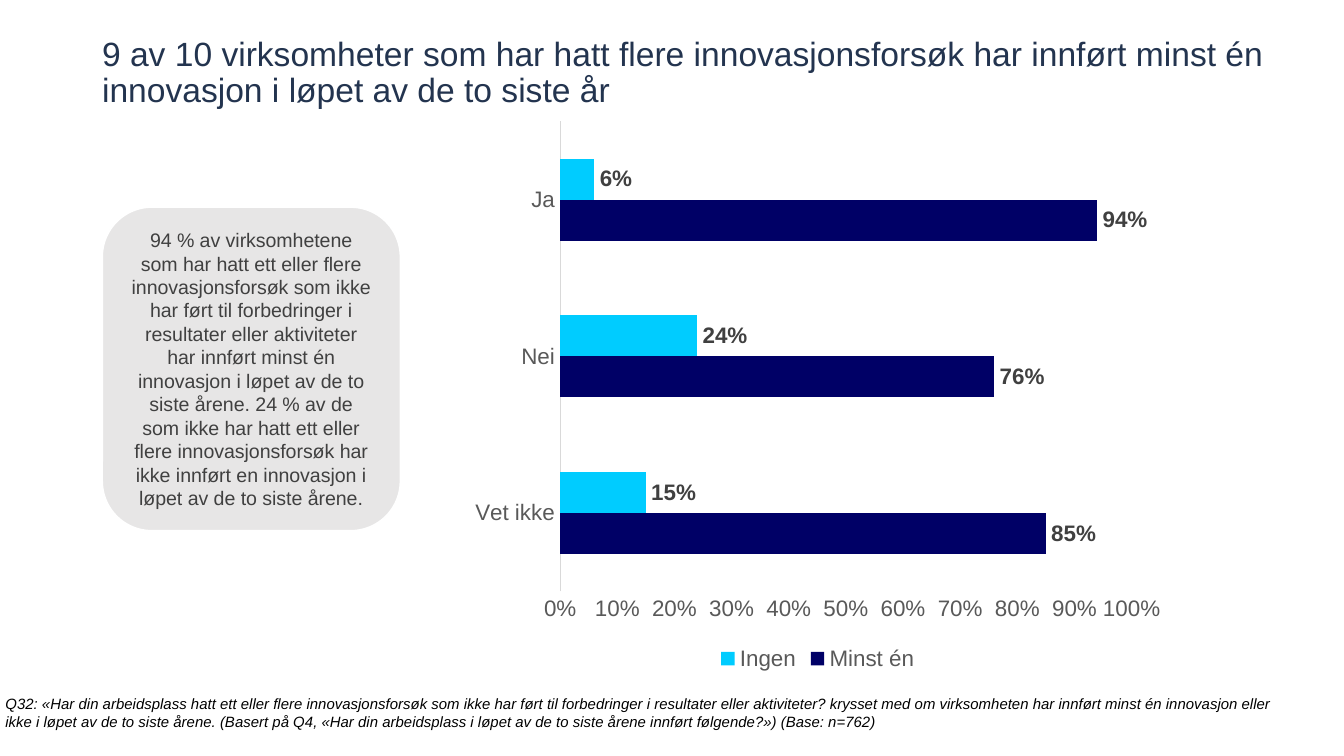
"""Builds the slide on innovation attempts and completed innovations."""
import dataclasses
from typing import Any

import pptx
import pptx.chart.data
import pptx.dml.color
import pptx.enum.chart
import pptx.enum.shapes
import pptx.enum.text
import pptx.util

WIDTH = 10
HEIGHT = WIDTH * 9 / 16
FONT = "Arial"
COLORS = {
    "title": "23344F", "note": "000000", "body": "404040", "axis": "595959",
    "axis_line": "D9D9D9", "callout": "E7E6E6", "outline": "FFFFFF",
    "navy": "000066", "cyan": "00CCFF",
}
CATEGORIES = ("Vet ikke", "Nei", "Ja")


@dataclasses.dataclass(frozen=True)
class Area:
    """A rectangle in shares of the slide's size."""
    left: float
    top: float
    width: float
    height: float

    def lengths(self) -> tuple[pptx.util.Length, ...]:
        """Return left, top, width and height as lengths."""
        return (pptx.util.Inches(self.left * WIDTH), pptx.util.Inches(self.top * HEIGHT),
                pptx.util.Inches(self.width * WIDTH), pptx.util.Inches(self.height * HEIGHT))


@dataclasses.dataclass(frozen=True)
class BarSeries:
    """One series of bars."""
    name: str
    values: tuple[float, ...]
    color: str


TITLE_AREA = Area(0.76 / WIDTH, 0.49 / HEIGHT, 8.83 / WIDTH, 0.33 / HEIGHT)
NOTE_AREA = Area(0.04 / WIDTH, 5.17 / HEIGHT, 9.55 / WIDTH, 0.27 / HEIGHT)
CHART_AREA = Area(3.43 / WIDTH, 0.82 / HEIGHT, 5.31 / WIDTH, 4.21 / HEIGHT)
CALLOUT_AREA = Area(0.76 / WIDTH, 1.54 / HEIGHT, 2.22 / WIDTH, 2.41 / HEIGHT)
SERIES = (
    BarSeries("Minst én", (0.85, 0.76, 0.94), "navy"),
    BarSeries("Ingen", (0.15, 0.24, 0.06), "cyan"),
)


def rgb(name: str) -> pptx.dml.color.RGBColor:
    """Look up a named colour."""
    return pptx.dml.color.RGBColor.from_string(COLORS[name])


def format_font(font: Any, size: float, color: str, bold: bool = False,
                italic: bool = False) -> None:
    """Set the face, size, colour and style of a font."""
    font.name, font.size = FONT, pptx.util.Pt(size)
    font.bold, font.italic = bold, italic
    font.color.rgb = rgb(color)


def write_text(shape: Any, text: str, *, size: float, color: str, italic: bool = False,
               align: str = "LEFT", anchor: str = "TOP", spacing: float = 1.0,
               inset: bool = False) -> None:
    """Fill a shape with one formatted paragraph."""
    frame = shape.text_frame
    frame.word_wrap = True
    frame.vertical_anchor = pptx.enum.text.MSO_ANCHOR[anchor]
    if not inset:
        frame.margin_left = frame.margin_top = frame.margin_right = frame.margin_bottom = 0
    paragraph = frame.paragraphs[0]
    paragraph.alignment = pptx.enum.text.PP_ALIGN[align]
    paragraph.line_spacing = spacing
    run = paragraph.add_run()
    run.text = text
    format_font(run.font, size, color, italic=italic)


def add_callout(slide: Any, area: Area) -> Any:
    """Add the rounded grey box."""
    shape = slide.shapes.add_shape(
        pptx.enum.shapes.MSO_SHAPE.ROUNDED_RECTANGLE, *area.lengths())
    shape.shadow.inherit = False
    shape.fill.solid()
    shape.fill.fore_color.rgb = rgb("callout")
    shape.line.color.rgb = rgb("outline")
    shape.line.width = pptx.util.Pt(1)
    return shape


def format_axis(axis: Any) -> None:
    """Apply the style shared by both axes."""
    axis.has_major_gridlines = False
    axis.major_tick_mark = axis.minor_tick_mark = pptx.enum.chart.XL_TICK_MARK.NONE
    format_font(axis.tick_labels.font, 12, "axis")


def add_bar_chart(slide: Any, area: Area, series_list: tuple[BarSeries, ...]) -> None:
    """Add the clustered bar chart."""
    data = pptx.chart.data.CategoryChartData(number_format="0%")
    data.categories = CATEGORIES
    for series in series_list:
        data.add_series(series.name, series.values)
    chart = slide.shapes.add_chart(
        pptx.enum.chart.XL_CHART_TYPE.BAR_CLUSTERED, *area.lengths(), data).chart
    chart.has_title = False
    format_font(chart.font, 10, "note")
    chart.has_legend = True
    chart.legend.position = pptx.enum.chart.XL_LEGEND_POSITION.BOTTOM
    chart.legend.include_in_layout = False
    format_font(chart.legend.font, 12, "axis")

    format_axis(chart.category_axis)
    chart.category_axis.format.line.color.rgb = rgb("axis_line")
    chart.category_axis.format.line.width = pptx.util.Pt(0.75)
    value_axis = chart.value_axis
    format_axis(value_axis)
    value_axis.format.line.fill.background()
    value_axis.minimum_scale, value_axis.maximum_scale, value_axis.major_unit = 0, 1, 0.1
    value_axis.tick_labels.number_format = "0%"
    value_axis.tick_labels.number_format_is_linked = False

    plot = chart.plots[0]
    plot.gap_width, plot.overlap, plot.vary_by_categories = 182, 0, False
    for bars, series in zip(plot.series, series_list):
        bars.format.fill.solid()
        bars.format.fill.fore_color.rgb = rgb(series.color)
        labels = bars.data_labels
        labels.show_value = True
        labels.number_format, labels.number_format_is_linked = "0%", False
        labels.position = pptx.enum.chart.XL_LABEL_POSITION.OUTSIDE_END
        format_font(labels.font, 12, "body", bold=True)


def main() -> None:
    """Build and save the presentation."""
    presentation = pptx.Presentation()
    presentation.slide_width = pptx.util.Inches(WIDTH)
    presentation.slide_height = pptx.util.Inches(HEIGHT)
    slide = presentation.slides.add_slide(presentation.slide_layouts[6])
    write_text(
        slide.shapes.add_textbox(*TITLE_AREA.lengths()),
        "9 av 10 virksomheter som har hatt flere innovasjonsforsøk har innført minst én "
        "innovasjon i løpet av de to siste år",
        size=18, color="title", anchor="BOTTOM", spacing=0.9)
    write_text(
        slide.shapes.add_textbox(*NOTE_AREA.lengths()),
        "Q32: «Har din arbeidsplass hatt ett eller flere innovasjonsforsøk som ikke har ført "
        "til forbedringer i resultater eller aktiviteter? krysset med om virksomheten har "
        "innført minst én innovasjon eller ikke i løpet av de to siste årene. (Basert på Q4, "
        "«Har din arbeidsplass i løpet av de to siste årene innført følgende?») (Base: n=762)",
        size=8, color="note", italic=True)
    add_bar_chart(slide, CHART_AREA, SERIES)
    write_text(
        add_callout(slide, CALLOUT_AREA),
        "94 % av virksomhetene som har hatt ett eller flere innovasjonsforsøk som ikke har "
        "ført til forbedringer i resultater eller aktiviteter har innført minst én innovasjon "
        "i løpet av de to siste årene. 24 % av de som ikke har hatt ett eller flere "
        "innovasjonsforsøk har ikke innført en innovasjon i løpet av de to siste årene.",
        size=10.5, color="body", align="CENTER", anchor="MIDDLE", inset=True)
    presentation.save("out.pptx")


if __name__ == "__main__":
    main()
